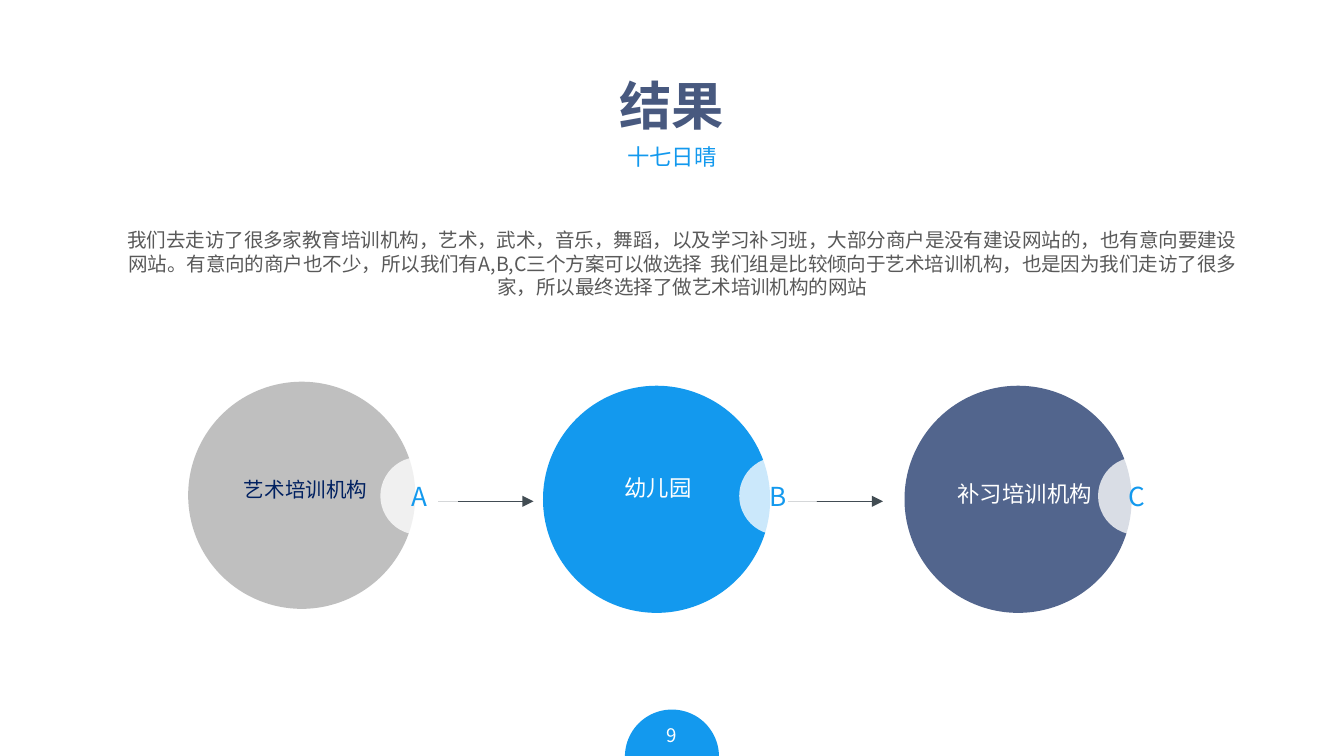
from dataclasses import dataclass
from typing import Optional

from lxml.etree import SubElement
from pptx import Presentation
from pptx.dml.color import RGBColor
from pptx.enum.shapes import MSO_CONNECTOR, MSO_SHAPE
from pptx.enum.text import MSO_ANCHOR, MSO_AUTO_SIZE, PP_ALIGN
from pptx.oxml.ns import qn
from pptx.util import Inches, Pt


@dataclass(frozen=True)
class Theme:
    font: str = "Noto Sans CJK SC"
    white: str = "FFFFFF"
    blue: str = "1399EE"
    slate: str = "52658D"
    gray: str = "BFBFBF"
    navy: str = "002060"
    title: str = "48597F"
    body: str = "595959"
    arrow: str = "424C53"
    title_size: float = 28
    badge_size: float = 14
    label_size: float = 12
    small_label_size: float = 11
    body_size: float = 10.5
    number_size: float = 10


@dataclass(frozen=True)
class Box:
    left: float
    top: float
    width: float
    height: float

    def lengths(self) -> tuple:
        return tuple(map(Inches, (self.left, self.top, self.width, self.height)))


@dataclass(frozen=True)
class Option:
    letter: str
    label: str
    fill: str
    label_color: str
    label_size: float
    circle: tuple[float, float]
    label_box: Box


THEME = Theme()
SLIDE_WIDTH = Inches(10)
SLIDE_HEIGHT = SLIDE_WIDTH * 9 // 16
CIRCLE_SIZE = 1.69
BADGE_SIZE, BADGE_LEFT, BADGE_TOP, BADGE_STEP = 0.58, 2.83, 3.4, 2.67
ARROW_Y, ARROW_LENGTH, ARROW_STARTS = 3.73, 0.71, (3.26, 5.86)

OPTIONS = (
    Option("A", "艺术培训机构", THEME.gray, THEME.navy, THEME.small_label_size,
           (1.4, 2.84), Box(1.44, 3.5, 1.67, 0.29)),
    Option("B", "幼儿园", THEME.blue, THEME.white, THEME.label_size,
           (4.04, 2.87), Box(3.85, 3.48, 2.09, 0.3)),
    Option("C", "补习培训机构", THEME.slate, THEME.white, THEME.label_size,
           (6.73, 2.87), Box(6.58, 3.52, 2.09, 0.3)),
)
SUMMARY = (
    "我们去走访了很多家教育培训机构，艺术，武术，音乐，舞蹈，以及学习补习班，"
    "大部分商户是没有建设网站的，也有意向要建设网站。有意向的商户也不少，"
    "所以我们有A,B,C三个方案可以做选择  我们组是比较倾向于艺术培训机构，"
    "也是因为我们走访了很多家，所以最终选择了做艺术培训机构的网站"
)


def write(shape, text: str, size: float, color: str, anchor=MSO_ANCHOR.TOP,
          bold: bool = False, line_spacing: Optional[float] = None) -> None:
    """Fill a shape with one centred paragraph, without a bullet."""
    frame = shape.text_frame
    frame.word_wrap = True
    frame.auto_size = MSO_AUTO_SIZE.NONE
    frame.vertical_anchor = anchor
    frame.text = text
    paragraph = frame.paragraphs[0]
    paragraph.alignment = PP_ALIGN.CENTER
    paragraph.space_before = Pt(0)
    if line_spacing:
        paragraph.line_spacing = Pt(line_spacing)
    properties = paragraph._p.get_or_add_pPr()
    properties.set("marL", "0")
    properties.set("indent", "0")
    SubElement(properties, qn("a:buNone"))
    font = paragraph.font
    font.name = THEME.font
    font.size = Pt(size)
    font.bold = bold
    font.color.rgb = RGBColor.from_string(color)
    east_asian = SubElement(properties.find(qn("a:defRPr")), qn("a:ea"))
    east_asian.set("typeface", THEME.font)


def place(shape, box: Box) -> None:
    shape.left, shape.top, shape.width, shape.height = box.lengths()


def add_text(slide, box: Box, text: str, size: float, color: str,
             anchor=MSO_ANCHOR.TOP) -> None:
    write(slide.shapes.add_textbox(*box.lengths()), text, size, color, anchor)


def add_filled(slide, kind: MSO_SHAPE, box: Box, color: str):
    shape = slide.shapes.add_shape(kind, *box.lengths())
    shape.shadow.inherit = False
    shape.fill.solid()
    shape.fill.fore_color.rgb = RGBColor.from_string(color)
    shape.line.fill.background()
    return shape


def add_arrow(slide, left: float) -> None:
    y = Inches(ARROW_Y)
    arrow = slide.shapes.add_connector(
        MSO_CONNECTOR.STRAIGHT, Inches(left), y, Inches(left + ARROW_LENGTH), y)
    arrow.line.color.rgb = RGBColor.from_string(THEME.arrow)
    arrow.line.width = Pt(0.75)
    SubElement(arrow.line._get_or_add_ln(), qn("a:tailEnd")).set("type", "triangle")
    SubElement(arrow._element.spPr, qn("a:effectLst"))


def add_badge(slide, letter: str, left: float) -> None:
    badge = add_filled(slide, MSO_SHAPE.OVAL,
                       Box(left, BADGE_TOP, BADGE_SIZE, BADGE_SIZE), THEME.white)
    color = badge._element.spPr.find(qn("a:solidFill"))[0]
    SubElement(color, qn("a:alpha")).set("val", "78000")
    write(badge, letter, THEME.badge_size, THEME.blue, MSO_ANCHOR.MIDDLE)


def add_page_number(slide) -> None:
    half_disc = add_filled(slide, MSO_SHAPE.PIE, Box(4.65, 5.28, 0.7, 0.7), THEME.blue)
    half_disc.adjustments[0] = 108  # 180 degrees, as 0.6 units per degree
    half_disc.adjustments[1] = 0
    add_text(slide, Box(4.79, 5.32, 0.42, 0.3), "9", THEME.number_size,
             THEME.white, MSO_ANCHOR.MIDDLE)


def main() -> None:
    presentation = Presentation()
    presentation.slide_width = SLIDE_WIDTH
    presentation.slide_height = SLIDE_HEIGHT
    slide = presentation.slides.add_slide(presentation.slide_layouts[1])

    title, subtitle = slide.placeholders
    place(title, Box(0.5, 0.31, 9, 0.94))
    write(title, "结果", THEME.title_size, THEME.title, MSO_ANCHOR.MIDDLE, bold=True)
    place(subtitle, Box(2.25, 0.96, 5.5, 0.35))
    write(subtitle, "十七日晴", THEME.label_size, THEME.blue, line_spacing=18.2)

    add_page_number(slide)
    add_text(slide, Box(0.83, 1.65, 8.5, 0.75), SUMMARY, THEME.body_size, THEME.body)
    for option in OPTIONS:
        add_filled(slide, MSO_SHAPE.OVAL,
                   Box(*option.circle, CIRCLE_SIZE, CIRCLE_SIZE), option.fill)
        add_text(slide, option.label_box, option.label, option.label_size,
                 option.label_color)
    for start in ARROW_STARTS:
        add_arrow(slide, start)
    for index, option in enumerate(OPTIONS):
        add_badge(slide, option.letter, BADGE_LEFT + index * BADGE_STEP)

    presentation.save("out.pptx")


if __name__ == "__main__":
    main()
